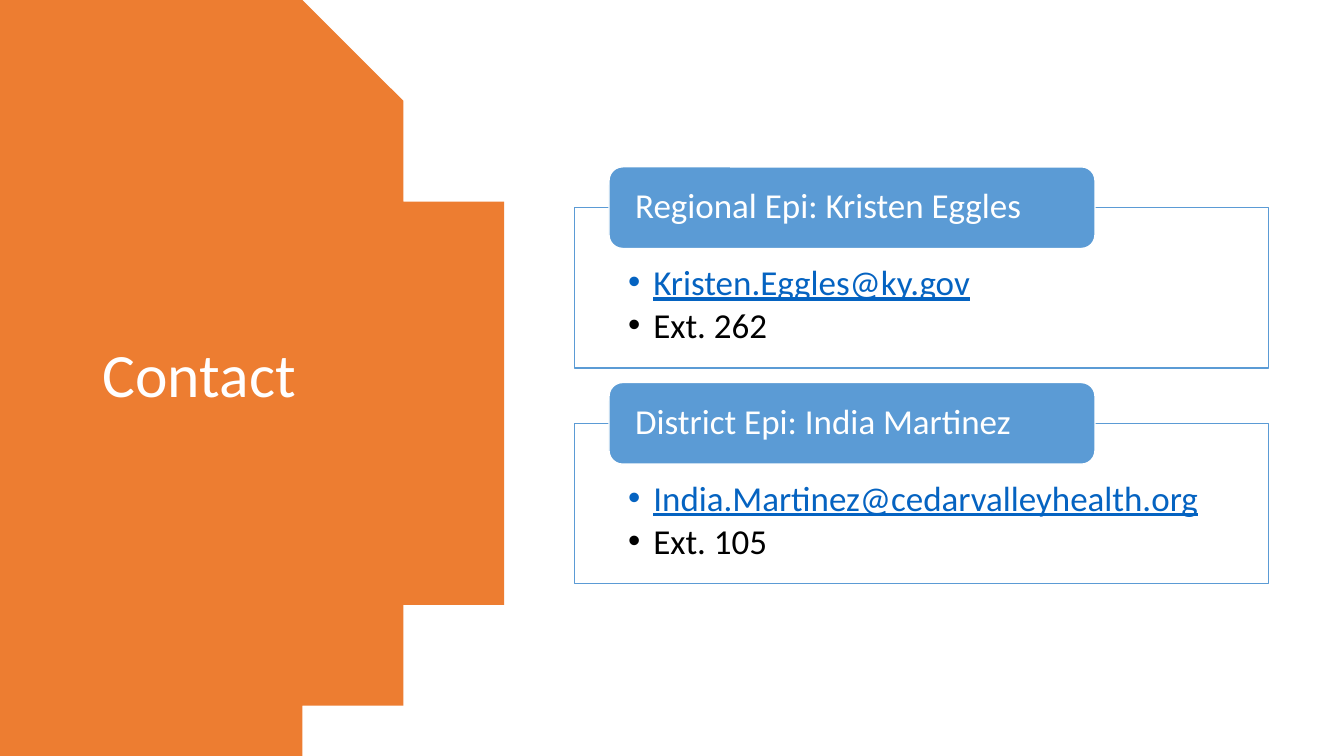
import math
from dataclasses import dataclass

from lxml import etree
from pptx import Presentation
from pptx.dml.color import RGBColor
from pptx.enum.shapes import MSO_SHAPE
from pptx.enum.text import MSO_ANCHOR, PP_ALIGN
from pptx.oxml.ns import qn
from pptx.util import Inches, Pt

RECT, ROUNDED = MSO_SHAPE.RECTANGLE, MSO_SHAPE.ROUNDED_RECTANGLE
TOP, MIDDLE = MSO_ANCHOR.TOP, MSO_ANCHOR.MIDDLE
LEFT = PP_ALIGN.LEFT

# Content
TITLE = "Contact"
CONTACTS = [
    ("Regional Epi: Kristen Eggles", "Kristen.Eggles@ky.gov", "Ext. 262"),
    ("District Epi: India Martinez", "India.Martinez@cedarvalleyhealth.org", "Ext. 105"),
]


@dataclass(frozen=True)
class Theme:
    font: str = "Calibri"
    title_size: int = 44
    body_size: int = 25
    orange: str = "ED7D31"
    blue: str = "5B9BD5"
    link: str = "0563C1"
    white: str = "FFFFFF"
    black: str = "000000"


THEME = Theme()

# Layout, in inches
SLIDE_W, SLIDE_H = 13.33, 7.5
ARC_X, ARC_R, ARC_STEPS = 0.53, 4.4, 120
TITLE_BOX = (0.92, 0.7, 3.23, 6.09)
CARD_X, CARD_Y, CARD_W, CARD_H = 5.7, 2.06, 6.88, 1.59
CARD_PITCH = 2.14
HEAD_X, HEAD_W, HEAD_H = 6.04, 4.82, 0.81


def rgb(value):
    return RGBColor.from_string(value)


def paint(sp, fill, line=None):
    sp.shadow.inherit = False
    sp.fill.solid()
    sp.fill.fore_color.rgb = rgb(fill)
    if line:
        sp.line.color.rgb = rgb(line)
        sp.line.width = Pt(1)
    else:
        sp.line.fill.background()


def write(sp, lines, size, anchor, insets):
    """Fill a shape with (text, colour, underline) lines."""
    tf = sp.text_frame
    tf.word_wrap = True
    tf.vertical_anchor = anchor
    tf.margin_left, tf.margin_top, tf.margin_right, tf.margin_bottom = map(Inches, insets)
    tf.text = "\n".join(text for text, _, _ in lines)
    for p, (_, color, underline) in zip(tf.paragraphs, lines):
        p.alignment = LEFT
        p.line_spacing = 0.9
        font = p.runs[0].font
        font.name, font.size = THEME.font, Pt(size)
        font.color.rgb = rgb(color)
        font.underline = underline
    return tf


def add_bullet(p):
    p.space_after = Pt(0.15 * THEME.body_size)
    pPr = p._p.get_or_add_pPr()
    pPr.set("marL", str(Inches(0.25)))
    pPr.set("indent", str(-Inches(0.25)))
    etree.SubElement(pPr, qn("a:buFont")).set("typeface", "Arial")
    etree.SubElement(pPr, qn("a:buChar")).set("char", "•")


def add_box(slide, kind, box, fill, line):
    sp = slide.shapes.add_shape(kind, *map(Inches, box))
    paint(sp, fill, line)
    return sp


def add_title_panel(slide):
    # Round panel running off the left edge
    half = SLIDE_H / 2
    sweep = math.asin(half / ARC_R)
    angles = [sweep * (2 * i / ARC_STEPS - 1) for i in range(ARC_STEPS + 1)]
    arc = [(ARC_X + ARC_R * math.cos(a), half + ARC_R * math.sin(a)) for a in angles]
    builder = slide.shapes.build_freeform(0, 0, scale=Inches(1))
    builder.add_line_segments(arc + [(0, SLIDE_H)], close=True)
    paint(builder.convert_to_shape(), THEME.orange)

    # Title
    sp = slide.shapes.add_textbox(*map(Inches, TITLE_BOX))
    write(sp, [(TITLE, THEME.white, False)], THEME.title_size, MIDDLE,
          (0.1, 0.05, 0.1, 0.05))


def add_contact(slide, y, heading, email, extension):
    # Outlined card with bulleted details
    card = add_box(slide, RECT, (CARD_X, y, CARD_W, CARD_H), THEME.white, THEME.blue)
    details = [(email, THEME.link, True), (extension, THEME.black, False)]
    tf = write(card, details, THEME.body_size, TOP, (0.53, 0.57, 0.53, 0.19))
    for p in tf.paragraphs:
        add_bullet(p)

    # Heading centred on the card's top edge
    head = add_box(slide, ROUNDED, (HEAD_X, y - HEAD_H / 2, HEAD_W, HEAD_H),
                   THEME.blue, THEME.white)
    write(head, [(heading, THEME.white, False)], THEME.body_size, MIDDLE,
          (0.22, 0, 0.22, 0))


def main():
    prs = Presentation()
    prs.slide_width, prs.slide_height = Inches(SLIDE_W), Inches(SLIDE_H)
    slide = prs.slides.add_slide(prs.slide_layouts[6])
    add_title_panel(slide)
    for i, contact in enumerate(CONTACTS):
        add_contact(slide, CARD_Y + i * CARD_PITCH, *contact)
    prs.save("out.pptx")


if __name__ == "__main__":
    main()
